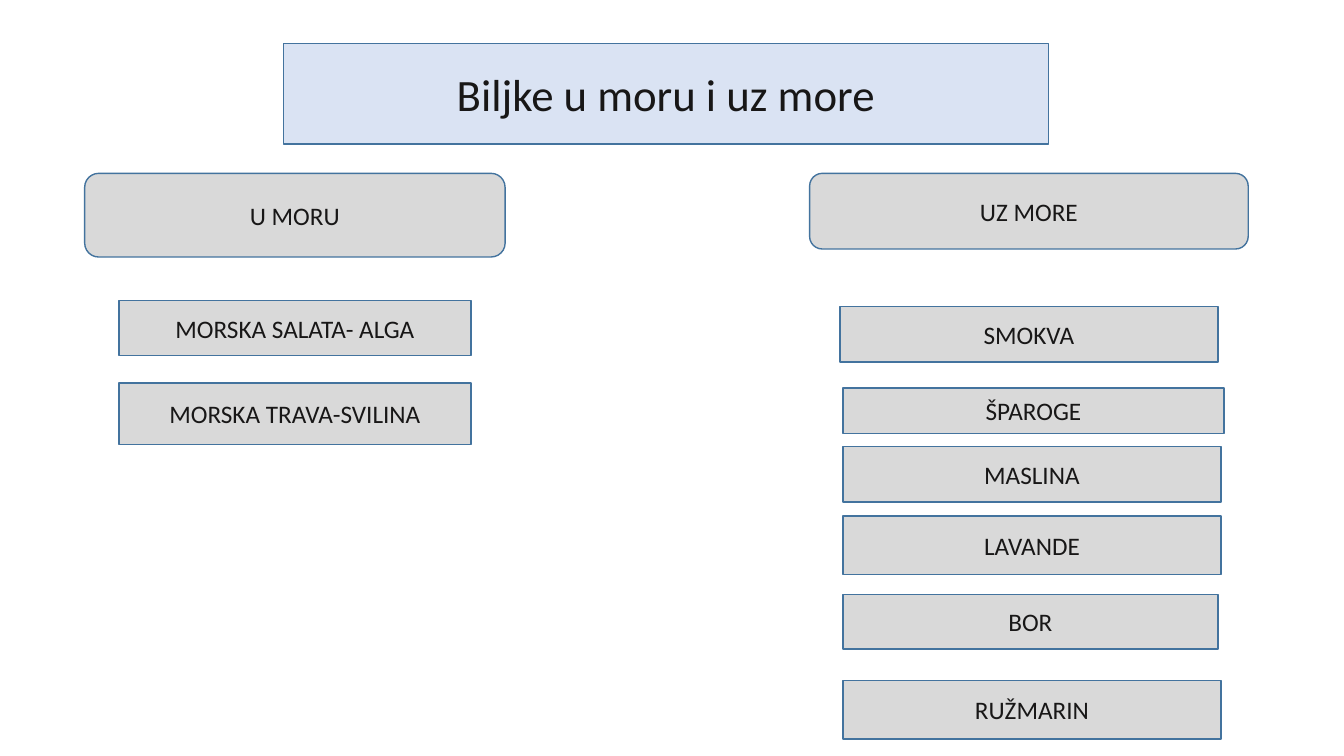
"""Build the slide on plants in and beside the sea."""
import pptx
import pptx.dml.color
import pptx.enum.shapes
import pptx.enum.text
import pptx.util

Inches = pptx.util.Inches
Pt = pptx.util.Pt
SHAPE = pptx.enum.shapes.MSO_SHAPE

TITLE = ("Biljke u moru i uz more", 2.81, 0.43, 7.59, 1)
HEADINGS = [
    ("U MORU", 0.84, 1.72, 4.17, 0.83),
    ("UZ MORE", 8.03, 1.72, 4.35, 0.75),
]
PLANTS = [
    ("MORSKA SALATA- ALGA", 1.18, 2.98, 3.49, 0.55),
    ("MORSKA TRAVA-SVILINA", 1.18, 3.8, 3.49, 0.61),
    ("SMOKVA", 8.33, 3.04, 3.75, 0.55),
    ("ŠPAROGE", 8.36, 3.85, 3.78, 0.45),
    ("MASLINA", 8.36, 4.43, 3.75, 0.55),
    ("LAVANDE", 8.36, 5.12, 3.75, 0.58),
    ("BOR", 8.36, 5.9, 3.72, 0.54),
    ("RUŽMARIN", 8.36, 6.75, 3.75, 0.58),
]
BLUE, GREY, BORDER, INK = "DAE3F3", "D9D9D9", "43739E", "181717"


def color(target, value):
    target.rgb = pptx.dml.color.RGBColor.from_string(value)


def add_box(s, box, kind=SHAPE.RECTANGLE, fill=GREY, size=18):
    text, *place = box
    sp = s.shapes.add_shape(kind, *map(Inches, place))
    sp.shadow.inherit = False
    sp.fill.solid()
    color(sp.fill.fore_color, fill)
    color(sp.line.color, BORDER)
    sp.line.width = Pt(1)
    tf = sp.text_frame
    tf.word_wrap = True
    tf.vertical_anchor = pptx.enum.text.MSO_ANCHOR.MIDDLE
    p = tf.paragraphs[0]
    p.text = text
    p.alignment = pptx.enum.text.PP_ALIGN.CENTER
    p.font.name = "Calibri"
    p.font.size = Pt(size)
    color(p.font.color, INK)


def main():
    prs = pptx.Presentation()
    prs.slide_width, prs.slide_height = Inches(13.33), Inches(7.5)
    s = prs.slides.add_slide(prs.slide_layouts[6])
    add_box(s, TITLE, fill=BLUE, size=32)
    for heading in HEADINGS:
        add_box(s, heading, kind=SHAPE.ROUNDED_RECTANGLE)
    for plant in PLANTS:
        add_box(s, plant)
    prs.save("out.pptx")


if __name__ == "__main__":
    main()
